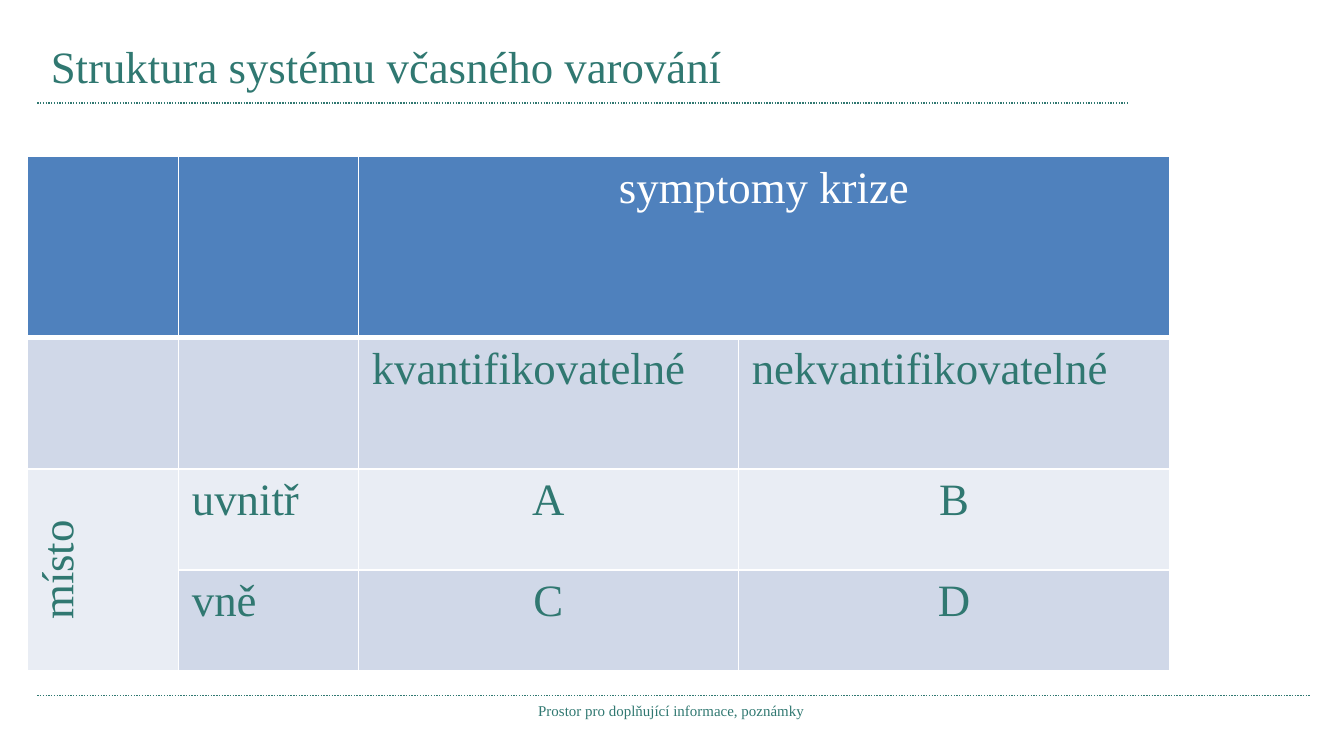
from typing import NamedTuple

from lxml.etree import SubElement
from pptx import Presentation
from pptx.dml.color import RGBColor
from pptx.enum.dml import MSO_LINE
from pptx.enum.shapes import MSO_CONNECTOR
from pptx.enum.text import MSO_ANCHOR, PP_ALIGN
from pptx.oxml.ns import qn
from pptx.util import Pt

GREEN, WHITE = "307871", "FFFFFF"
HEADER, BAND_DARK, BAND_LIGHT = "4F81BD", "D0D8E8", "E9EDF4"
FONT = "Times New Roman"


class Entry(NamedTuple):
    row: int
    column: int
    text: str
    align: PP_ALIGN = PP_ALIGN.CENTER
    color: str = GREEN


COLUMN_WIDTHS = [81.2, 96.4, 203.6, 231]
ROW_HEIGHTS = [97, 70.6, 54, 54]
ROW_FILLS = [HEADER, BAND_DARK, BAND_LIGHT, BAND_DARK]
ENTRIES = [
    Entry(0, 2, "symptomy krize", color=WHITE),
    Entry(1, 2, "kvantifikovatelné", PP_ALIGN.LEFT),
    Entry(1, 3, "nekvantifikovatelné", PP_ALIGN.LEFT),
    Entry(2, 0, "místo"),
    Entry(2, 1, "uvnitř", PP_ALIGN.LEFT),
    Entry(2, 2, "A"),
    Entry(2, 3, "B"),
    Entry(3, 1, "vně", PP_ALIGN.LEFT),
    Entry(3, 2, "C"),
    Entry(3, 3, "D"),
]


def rgb(color: str) -> RGBColor:
    return RGBColor.from_string(color)


def write(frame, text: str, *, size: float = 24, color: str = GREEN,
          align: PP_ALIGN = PP_ALIGN.LEFT) -> None:
    paragraph = frame.paragraphs[0]
    paragraph.alignment = align
    run = paragraph.add_run()
    run.text = text
    run.font.name = FONT
    run.font.size = Pt(size)
    run.font.color.rgb = rgb(color)


def place(shape, left: float, top: float, width: float, height: float) -> None:
    shape.left, shape.top = Pt(left), Pt(top)
    shape.width, shape.height = Pt(width), Pt(height)


def draw_rule(slide, left: float, right: float, y: float) -> None:
    rule = slide.shapes.add_connector(
        MSO_CONNECTOR.STRAIGHT, Pt(left), Pt(y), Pt(right), Pt(y))
    rule.line.color.rgb = rgb(GREEN)
    rule.line.width = Pt(0.75)
    rule.line.dash_style = MSO_LINE.ROUND_DOT
    SubElement(rule._element.spPr, qn("a:effectLst"))


def format_cell(cell, fill: str, bottom_width: float) -> None:
    properties = cell._tc.get_or_add_tcPr()
    for side, width in zip("LRTB", (1, 1, 1, bottom_width)):
        border = SubElement(properties, qn(f"a:ln{side}"), w=str(Pt(width)))
        solid = SubElement(border, qn("a:solidFill"))
        SubElement(solid, qn("a:srgbClr"), val=WHITE)
    cell.fill.solid()
    cell.fill.fore_color.rgb = rgb(fill)


def draw_matrix(slide) -> None:
    table = slide.shapes.add_table(
        len(ROW_HEIGHTS), len(COLUMN_WIDTHS), Pt(14.4), Pt(83.8),
        Pt(sum(COLUMN_WIDTHS)), Pt(sum(ROW_HEIGHTS))).table
    for column, width in zip(table.columns, COLUMN_WIDTHS):
        column.width = Pt(width)
    for index, (height, fill) in enumerate(zip(ROW_HEIGHTS, ROW_FILLS)):
        table.rows[index].height = Pt(height)
        for cell in table.rows[index].cells:
            format_cell(cell, fill, bottom_width=3 if index == 0 else 1)

    # Merged headings
    table.cell(0, 2).merge(table.cell(0, 3))
    place_heading = table.cell(2, 0)
    place_heading.merge(table.cell(3, 0))
    place_heading.vertical_anchor = MSO_ANCHOR.MIDDLE
    place_heading._tc.get_or_add_tcPr().set("vert", "vert270")

    for entry in ENTRIES:
        write(table.cell(entry.row, entry.column).text_frame, entry.text,
              align=entry.align, color=entry.color)


def main() -> None:
    presentation = Presentation()
    presentation.slide_width, presentation.slide_height = Pt(720), Pt(405)
    slide = presentation.slides.add_slide(presentation.slide_layouts[5])

    # Dotted rules under the title and above the footer
    draw_rule(slide, 20, 604, 55.2)
    draw_rule(slide, 20, 702, 372.5)

    # Footer
    footer = slide.shapes.add_textbox(Pt(212.4), Pt(372.5), Pt(294.5), Pt(16.6))
    footer.text_frame.word_wrap = True
    footer.text_frame.vertical_anchor = MSO_ANCHOR.MIDDLE
    write(footer.text_frame, "Prostor pro doplňující informace, poznámky",
          size=8, align=PP_ALIGN.CENTER)

    # Title
    title = slide.shapes.title
    place(title, 20, 15, 476, 40)
    title.text_frame.vertical_anchor = MSO_ANCHOR.MIDDLE
    write(title.text_frame, "Struktura systému včasného varování")

    # Matrix of crisis symptoms
    draw_matrix(slide)

    presentation.save("out.pptx")


if __name__ == "__main__":
    main()
